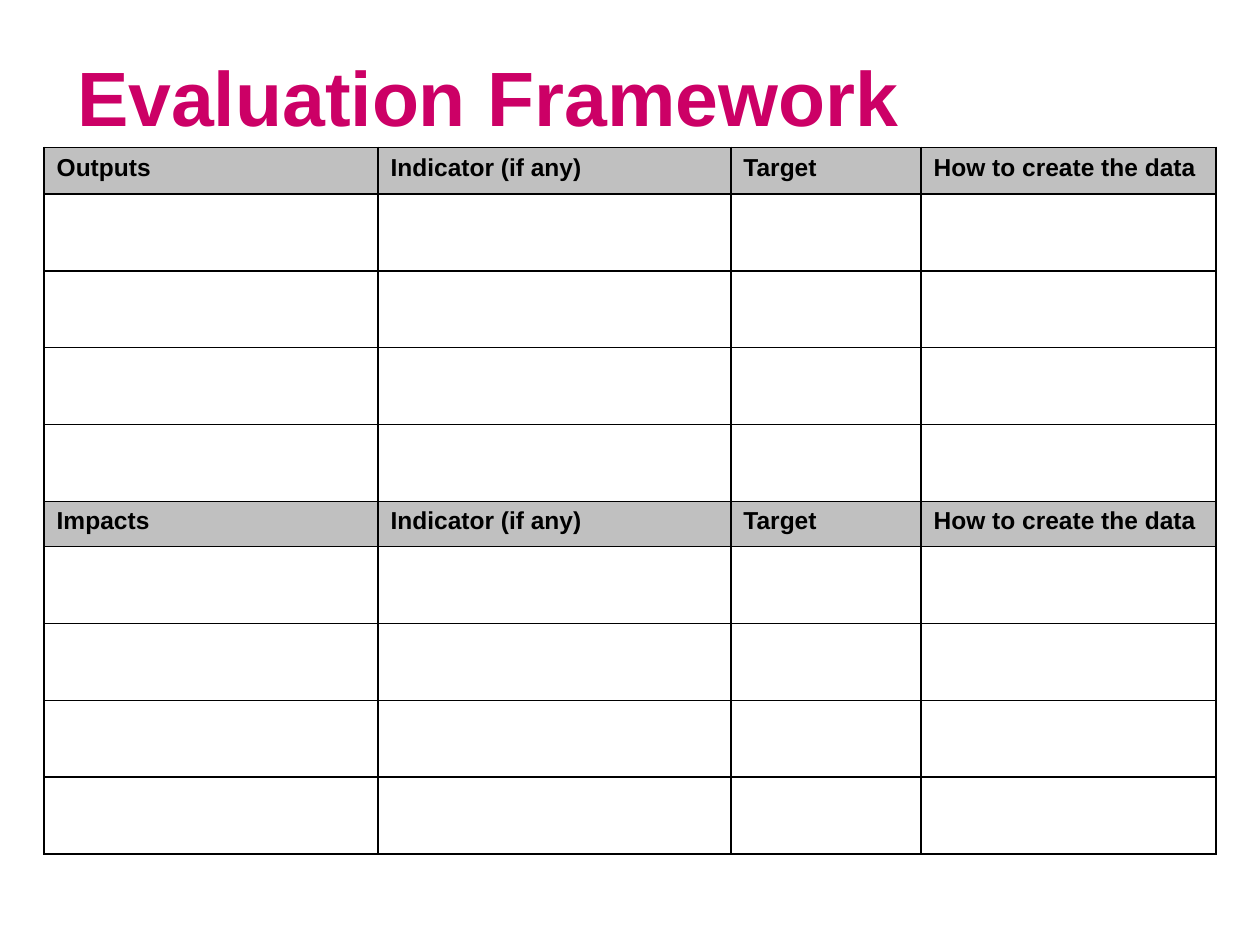
from dataclasses import dataclass

from lxml.etree import SubElement
from pptx import Presentation
from pptx.dml.color import RGBColor
from pptx.enum.text import MSO_ANCHOR as Anchor, PP_ALIGN as Align
from pptx.oxml.ns import qn
from pptx.util import Inches, Pt

MAGENTA = RGBColor(0xCC, 0x00, 0x66)
BLACK = RGBColor(0x00, 0x00, 0x00)
GREY = RGBColor(0xC0, 0xC0, 0xC0)

FONT = "Arial"
BORDER_WIDTH = Pt(1)
COLUMN_WIDTHS = (2.65, 2.8, 1.51, 2.34)
SHARED_HEADINGS = ("Indicator (if any)", "Target", "How to create the data")
BLANK_ROWS = 4
BLANK_HEIGHT = 0.61


@dataclass(frozen=True)
class Section:
    heading: str
    header_height: float


SECTIONS = (Section("Outputs", 0.37), Section("Impacts", 0.36))


def write_text(text_frame, text: str, *, size: float, color: RGBColor,
               align: Align = Align.LEFT) -> None:
    """Write one bold paragraph into a text frame."""
    paragraph = text_frame.paragraphs[0]
    paragraph.alignment = align
    run = paragraph.add_run()
    run.text = text
    run.font.name = FONT
    run.font.size = Pt(size)
    run.font.bold = True
    run.font.color.rgb = color


def add_borders(cell) -> None:
    """Draw a solid line on each side; call before setting the fill."""
    properties = cell._tc.get_or_add_tcPr()
    for side in ("a:lnL", "a:lnR", "a:lnT", "a:lnB"):
        line = SubElement(properties, qn(side), w=str(BORDER_WIDTH))
        fill = SubElement(line, qn("a:solidFill"))
        SubElement(fill, qn("a:srgbClr"), val=str(BLACK))


def format_header(cell, text: str) -> None:
    cell.fill.solid()
    cell.fill.fore_color.rgb = GREY
    write_text(cell.text_frame, text, size=14, color=BLACK)
    # Hanging indent
    properties = cell.text_frame.paragraphs[0]._p.get_or_add_pPr()
    properties.set("marL", str(Inches(0.38)))
    properties.set("indent", str(Inches(-0.38)))


def add_title(slide, text: str) -> None:
    title = slide.shapes.title
    title.left, title.top = Inches(0.33), Inches(0.17)
    title.width, title.height = Inches(7.09), Inches(1.18)
    title.text_frame.vertical_anchor = Anchor.MIDDLE
    write_text(title.text_frame, text, size=44, color=MAGENTA, align=Align.CENTER)


def add_framework_table(slide) -> None:
    heights = [height for section in SECTIONS
               for height in (section.header_height, *[BLANK_HEIGHT] * BLANK_ROWS)]
    table = slide.shapes.add_table(
        len(heights), len(COLUMN_WIDTHS), Inches(0.35), Inches(1.17),
        Inches(sum(COLUMN_WIDTHS)), Inches(sum(heights))).table
    table.first_row = table.horz_banding = False

    for column, width in zip(table.columns, COLUMN_WIDTHS):
        column.width = Inches(width)
    for row, height in zip(table.rows, heights):
        row.height = Inches(height)

    # Each section is a header row followed by blank rows
    for row_index, row in enumerate(table.rows):
        section_index, offset = divmod(row_index, BLANK_ROWS + 1)
        headings = (SECTIONS[section_index].heading, *SHARED_HEADINGS)
        for cell, heading in zip(row.cells, headings):
            add_borders(cell)
            if offset == 0:
                format_header(cell, heading)
            else:
                cell.fill.background()


def main() -> None:
    presentation = Presentation()
    presentation.slide_width = Inches(10)
    presentation.slide_height = Inches(7.5)
    slide = presentation.slides.add_slide(presentation.slide_layouts[5])
    add_title(slide, "Evaluation Framework")
    add_framework_table(slide)
    presentation.save("out.pptx")


if __name__ == "__main__":
    main()
